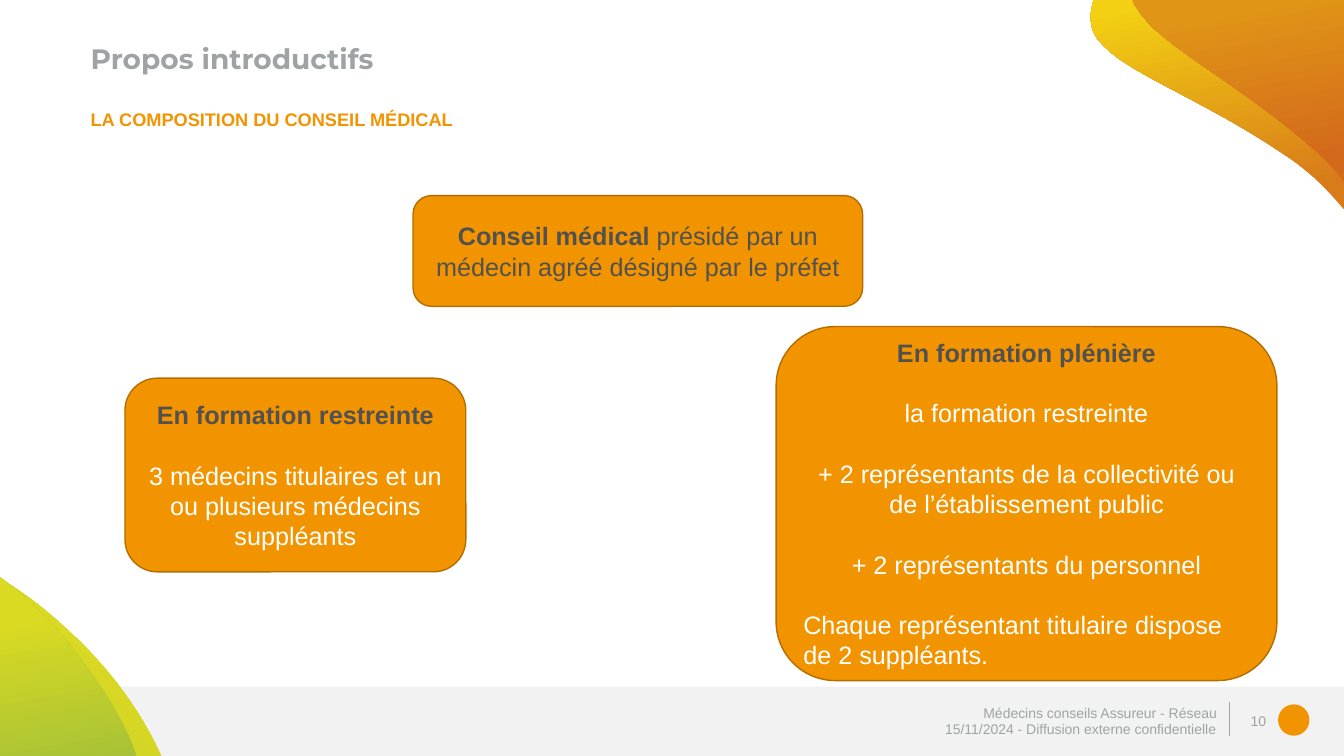
from dataclasses import dataclass

from lxml.etree import SubElement
from pptx import Presentation
from pptx.dml.color import RGBColor
from pptx.enum.shapes import MSO_CONNECTOR, MSO_SHAPE
from pptx.enum.text import MSO_ANCHOR, MSO_AUTO_SIZE, PP_ALIGN
from pptx.oxml.ns import qn
from pptx.util import Cm, Pt

ORANGE, DARK_ORANGE = "F29400", "B36D00"
GREY, DARK_GREY, LIGHT_GREY, WHITE = "9FA3A4", "535150", "F2F2F2", "FFFFFF"
CURVE_STEPS = 16
Point = tuple[float, float]
Area = tuple[float, float, float, float]


@dataclass
class Swoosh:
    """A corner shape in cm: a chain of Bezier curves closed through a slide corner."""
    start: Point
    curves: list[tuple[Point, Point, Point]]
    corner: Point
    stops: list[tuple[float, str]]
    angle: int


@dataclass
class Span:
    text: str
    color: str = WHITE
    bold: bool = False


@dataclass
class Para:
    spans: list[Span]
    gap: float = 0
    align: PP_ALIGN = PP_ALIGN.CENTER


@dataclass
class Card:
    area: Area
    paras: list[Para]


@dataclass
class Footer:
    text: str
    area: Area
    anchor: MSO_ANCHOR
    line_spacing: float = 1.0


LINE_GAP = 21.6

SWOOSHES = [
    Swoosh((27.56, 0),
           [((27.43, 0.43), (27.48, 0.76), (27.69, 1.02)),
            ((28.35, 1.85), (30.18, 2.41), (32.39, 3.91)),
            ((32.97, 4.29), (33.45, 4.78), (33.87, 5.28))],
           (33.87, 0), [(0.13, "D87C19"), (0.94, "F3D013")], 100),
    Swoosh((28.55, 0),
           [((28.58, 0.08), (28.6, 0.15), (28.65, 0.2)),
            ((29.21, 1.14), (30.96, 1.91), (32.99, 3.66)),
            ((33.32, 3.94), (33.6, 4.24), (33.87, 4.57))],
           (33.87, 0), [(0.13, "D36A1B"), (0.88, "E09517")], 100),
    Swoosh((4.06, 19.05),
           [((3.66, 18.16), (3.02, 17.17), (2.06, 16.21)),
            ((1.96, 16.1), (1.83, 16), (1.73, 15.9)),
            ((1.14, 15.34), (0.56, 14.91), (0, 14.58))],
           (0, 19.05), [(0, "C6D02A"), (0.62, "DAD923")], 50),
    Swoosh((3.45, 19.05),
           [((3.15, 18.26), (2.67, 17.4), (1.98, 16.54)),
            ((1.88, 16.41), (1.8, 16.28), (1.7, 16.18)),
            ((1.14, 15.49), (0.56, 14.96), (0, 14.55))],
           (0, 19.05), [(0, "A7C236"), (0.77, "DADA22")], 100),
]

CARDS = [
    Card((10.41, 4.93, 11.33, 2.79), [
        Para([Span("Conseil médical", DARK_GREY, True),
              Span(" présidé par un médecin agréé désigné par le préfet", DARK_GREY)]),
    ]),
    Card((3.15, 9.53, 8.59, 4.88), [
        Para([Span("En formation restreinte", DARK_GREY, True)]),
        Para([Span("3 médecins titulaires et un ou plusieurs médecins suppléants")], LINE_GAP),
    ]),
    Card((19.56, 8.23, 12.62, 8.92), [
        Para([Span("En formation plénière", DARK_GREY, True)]),
        Para([Span("la formation restreinte")], LINE_GAP),
        Para([Span("+ 2 représentants de la collectivité ou de l’établissement public")], LINE_GAP),
        Para([Span("+ 2 représentants du personnel")], LINE_GAP),
        Para([Span("Chaque représentant titulaire dispose de 2 suppléants.")],
             LINE_GAP, PP_ALIGN.LEFT),
    ]),
]

FOOTERS = [
    Footer("15/11/2024 - Diffusion externe confidentielle",
           (22.23, 18.16, 8.66, 0.41), MSO_ANCHOR.MIDDLE),
    Footer("Médecins conseils Assureur - Réseau",
           (22.25, 17.75, 8.66, 0.41), MSO_ANCHOR.BOTTOM, 0.7),
    Footer("10", (31.09, 17.65, 1.07, 1.02), MSO_ANCHOR.MIDDLE),
]


def rgb(color: str) -> RGBColor:
    return RGBColor.from_string(color)


def to_cm(values) -> list[Cm]:
    return [Cm(value) for value in values]


def place(shape, area: Area) -> None:
    shape.left, shape.top, shape.width, shape.height = to_cm(area)


def write(para, text: str, *, size: float, color: str, bold: bool = False,
          font: str = "Arial") -> None:
    span = para.add_run()
    span.text = text
    span.font.size, span.font.bold, span.font.name = Pt(size), bold, font
    span.font.color.rgb = rgb(color)


def add_plain_shape(page, kind: MSO_SHAPE, area: Area, fill: str, line: str | None = None):
    shape = page.shapes.add_shape(kind, *to_cm(area))
    shape.shadow.inherit = False
    shape.fill.solid()
    shape.fill.fore_color.rgb = rgb(fill)
    if line:
        shape.line.color.rgb = rgb(line)
        shape.line.width = Pt(1)
    else:
        shape.line.fill.background()
    return shape


def curve_points(start: Point, first: Point, second: Point, end: Point) -> list[list[Cm]]:
    """Sample a cubic Bezier curve, leaving out its start."""
    points = []
    for step in range(1, CURVE_STEPS + 1):
        t = step / CURVE_STEPS
        weights = ((1 - t) ** 3, 3 * t * (1 - t) ** 2, 3 * t ** 2 * (1 - t), t ** 3)
        knots = (start, first, second, end)
        points.append(to_cm(sum(w * knot[axis] for w, knot in zip(weights, knots))
                            for axis in (0, 1)))
    return points


def add_swoosh(page, swoosh: Swoosh) -> None:
    builder = page.shapes.build_freeform(*to_cm(swoosh.start))
    start = swoosh.start
    for curve in swoosh.curves:
        builder.add_line_segments(curve_points(start, *curve), close=False)
        start = curve[-1]
    builder.add_line_segments([to_cm(swoosh.corner)], close=True)
    shape = builder.convert_to_shape()
    shape.shadow.inherit = False
    shape.line.fill.background()
    shape.fill.gradient()
    shape.fill.gradient_angle = swoosh.angle
    for stop, (position, color) in zip(shape.fill.gradient_stops, swoosh.stops):
        stop.position = position
        stop.color.rgb = rgb(color)


def add_card(page, card: Card) -> None:
    box = add_plain_shape(page, MSO_SHAPE.ROUNDED_RECTANGLE, card.area, ORANGE, DARK_ORANGE)
    frame = box.text_frame
    frame.word_wrap = True
    frame.vertical_anchor = MSO_ANCHOR.MIDDLE
    for index, content in enumerate(card.paras):
        para = frame.add_paragraph() if index else frame.paragraphs[0]
        para.alignment = content.align
        para.space_before = Pt(content.gap)
        for span in content.spans:
            write(para, span.text, size=18, color=span.color, bold=span.bold)


def add_footer(page, footer: Footer) -> None:
    frame = page.shapes.add_textbox(*to_cm(footer.area)).text_frame
    frame.word_wrap = True
    frame.margin_top = frame.margin_bottom = 0
    frame.vertical_anchor = footer.anchor
    para = frame.paragraphs[0]
    para.alignment = PP_ALIGN.RIGHT
    para.line_spacing = footer.line_spacing
    write(para, footer.text, size=10, color=GREY)


def fill_placeholder(holder, area: Area, text: str, **text_format) -> None:
    place(holder, area)
    frame = holder.text_frame
    frame.auto_size = MSO_AUTO_SIZE.NONE
    frame.vertical_anchor = MSO_ANCHOR.TOP
    para = frame.paragraphs[0]
    properties = para._p.get_or_add_pPr()
    properties.set("marL", "0")
    properties.set("indent", "0")
    SubElement(properties, qn("a:buNone"))
    para.alignment = PP_ALIGN.LEFT
    para.space_before = Pt(0)
    write(para, text, bold=True, **text_format)


def main() -> None:
    deck = Presentation()
    deck.slide_width, deck.slide_height = Cm(33.87), Cm(19.05)
    page = deck.slides.add_slide(deck.slide_layouts[1])

    add_plain_shape(page, MSO_SHAPE.RECTANGLE, (0, 17.3, 33.87, 1.75), LIGHT_GREY)
    add_plain_shape(page, MSO_SHAPE.OVAL, (32.21, 17.75, 0.79, 0.79), ORANGE)
    divider = page.shapes.add_connector(MSO_CONNECTOR.STRAIGHT,
                                        *to_cm((30.99, 17.7, 30.99, 18.54)))
    divider.line.color.rgb = rgb(GREY)
    divider.line.width = Pt(1)
    SubElement(divider._element.spPr, qn("a:effectLst"))
    for swoosh in SWOOSHES:
        add_swoosh(page, swoosh)

    fill_placeholder(page.shapes.title, (2.03, 0.91, 24.99, 2.41), "Propos introductifs",
                     size=20, color=GREY, font="Montserrat")
    fill_placeholder(page.placeholders[1], (2.03, 2.59, 29.79, 15.57),
                     "LA COMPOSITION DU CONSEIL MÉDICAL", size=13, color=ORANGE)
    for footer in FOOTERS:
        add_footer(page, footer)
    for card in CARDS:
        add_card(page, card)
    deck.save("out.pptx")


if __name__ == "__main__":
    main()
